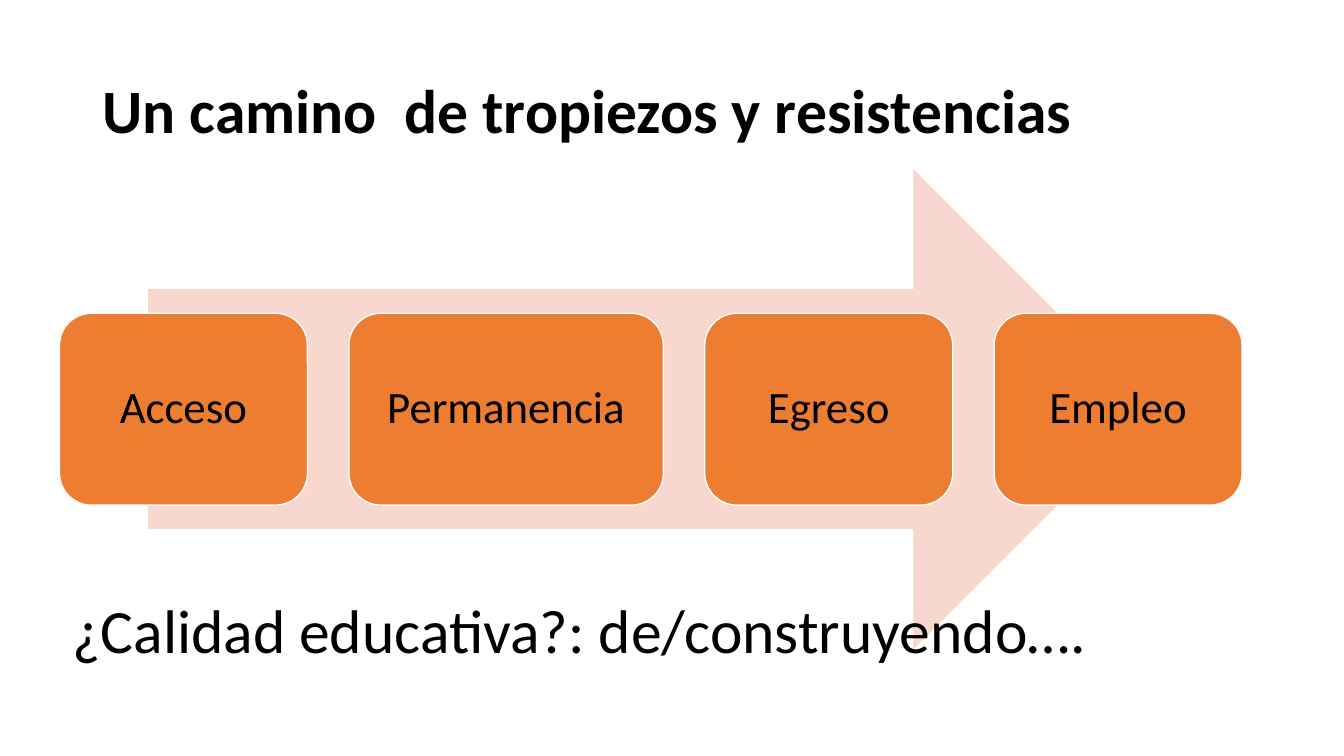
import pptx
import pptx.util
import pptx.dml.color
import pptx.enum.shapes
import pptx.enum.text

Inches = pptx.util.Inches
Pt = pptx.util.Pt
SHAPE = pptx.enum.shapes.MSO_SHAPE
ALIGN = pptx.enum.text.PP_ALIGN
ANCHOR = pptx.enum.text.MSO_ANCHOR

BLACK, WHITE, ORANGE, PINK = "000000", "FFFFFF", "ED7D31", "F8D7CE"
STAGES = [("Acceso", 2.46), ("Permanencia", 3.12), ("Egreso", 2.46), ("Empleo", 2.46)]
STAGE_GAP = 0.41


def color(hex_string):
    return pptx.dml.color.RGBColor.from_string(hex_string)


def write_text(shape, text, size, align, anchor, bold=False, line_spacing=1.0):
    frame = shape.text_frame
    frame.word_wrap = True
    frame.vertical_anchor = anchor
    paragraph = frame.paragraphs[0]
    paragraph.text = text
    paragraph.alignment = align
    paragraph.line_spacing = line_spacing
    paragraph.font.name = "Calibri"
    paragraph.font.size = Pt(size)
    paragraph.font.bold = bold
    paragraph.font.color.rgb = color(BLACK)


def add_filled_shape(slide, kind, left, top, width, height, fill, line=None):
    shape = slide.shapes.add_shape(
        kind, Inches(left), Inches(top), Inches(width), Inches(height))
    shape.shadow.inherit = False
    shape.fill.solid()
    shape.fill.fore_color.rgb = color(fill)
    if line:
        shape.line.color.rgb = color(line)
        shape.line.width = Pt(1)
    else:
        shape.line.fill.background()
    return shape


def add_title(slide, left, top, width, height):
    box = slide.shapes.add_textbox(
        Inches(left), Inches(top), Inches(width), Inches(height))
    write_text(box, "Un camino  de tropiezos y resistencias", 44,
               ALIGN.LEFT, ANCHOR.MIDDLE, bold=True, line_spacing=0.9)


def add_process(slide, left, top, width, height):
    """Draw the big arrow with the row of stages centred on its height."""
    arrow_left, arrow_width = left + 0.88, width - 1.76
    add_filled_shape(slide, SHAPE.RIGHT_ARROW, arrow_left, top, arrow_width, height, PINK)
    stage_height = 0.4 * height
    stage_top = top + (height - stage_height) / 2
    for name, stage_width in STAGES:
        stage = add_filled_shape(slide, SHAPE.ROUNDED_RECTANGLE, left, stage_top,
                                 stage_width, stage_height, ORANGE, WHITE)
        write_text(stage, name, 32, ALIGN.CENTER, ANCHOR.MIDDLE, line_spacing=0.9)
        left += stage_width + STAGE_GAP


def add_closing_question(slide, left, top, width, height):
    box = slide.shapes.add_textbox(
        Inches(left), Inches(top), Inches(width), Inches(height))
    write_text(box, "¿Calidad educativa?: de/construyendo….", 44,
               ALIGN.CENTER, ANCHOR.TOP)


def main():
    presentation = pptx.Presentation()
    presentation.slide_width = Inches(13.33)
    presentation.slide_height = Inches(7.5)
    slide = presentation.slides.add_slide(presentation.slide_layouts[6])
    add_title(slide, 0.92, 0.4, 11.5, 1.45)
    add_process(slide, 0.59, 1.68, 11.73, 4.76)
    add_closing_question(slide, 0.28, 5.82, 10.94, 0.84)
    presentation.save("out.pptx")


if __name__ == "__main__":
    main()
